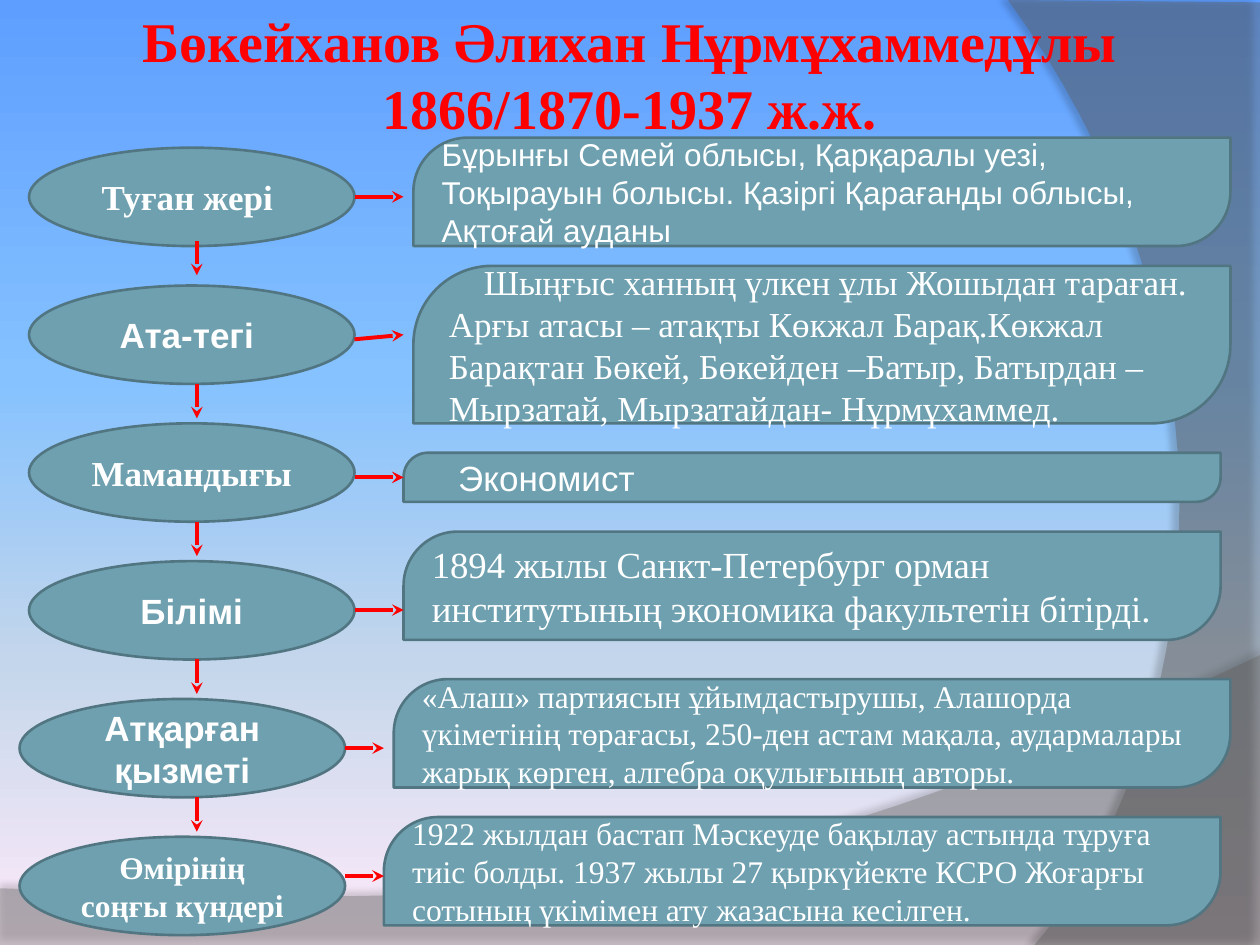
from dataclasses import dataclass

from lxml import etree
from pptx import Presentation
from pptx.dml.color import RGBColor
from pptx.enum.shapes import MSO_CONNECTOR, MSO_SHAPE
from pptx.enum.text import MSO_ANCHOR, PP_ALIGN
from pptx.oxml.ns import qn
from pptx.util import Pt

ELLIPSE, LEAF = MSO_SHAPE.OVAL, MSO_SHAPE.ROUND_2_DIAG_RECTANGLE
STRAIGHT = MSO_CONNECTOR.STRAIGHT
MIDDLE = MSO_ANCHOR.MIDDLE
LEFT, CENTER = PP_ALIGN.LEFT, PP_ALIGN.CENTER
SERIF, SANS = "Times New Roman", "Arial"
TEAL, EDGE, RED, WHITE = "6EA0B0", "517682", "FF0000", "FFFFFF"
SKY = [(0, "5E9EFF"), (40, "85C2FF"), (70, "C4D6EB"), (100, "FFEBFA")]
OVAL_TOP, OVAL_STEP, OVAL_W, OVAL_H = 84.4, 78.75, 186, 56.2
DOWN_X, DOWN_LEN = 112.5, 19.7


@dataclass
class Label:
    text: str
    size: float
    font: str = SERIF
    indent: float = 0


@dataclass
class Row:
    oval_left: float
    topic: Label
    box: tuple[float, float, float, float]
    detail: Label
    arrow_end: float
    arrow_y: tuple[float, float]
    down_shift: float = 0


@dataclass
class Wave:
    start: tuple[float, float]
    before: list[tuple[float, float]]
    curve: list[tuple[float, float]]
    color: str
    alpha: int
    shadow_alpha: int
    shadow_dist: float
    shadow_angle: int


WAVES = [
    Wave((0, 507.6), [(0, 540), (720, 540), (720, 374.4)],
         [(402.5, 524.9), (281.5, 517.7), (0, 507.6)], "7F7F7F", 45, 35, 3.5, 270),
    Wave((720, 1.4), [(720, 540), (591.1, 540)],
         [(673.2, 445.7), (733, 216), (576, 0)], "5E5E5E", 40, 45, 4, 180),
]

ROWS = [
    Row(16.6, Label("Туған жері ", 20), (236.2, 78.7, 466.9, 61.9),
        Label("Бұрынғы Семей облысы, Қарқаралы уезі, Тоқырауын болысы. "
              "Қазіргі Қарағанды облысы, Ақтоғай ауданы", 18, SANS),
        230.6, (112.5, 112.5), -3),
    Row(16.6, Label("Ата-тегі ", 20, SANS), (236.2, 151.9, 466.9, 90),
        Label("Шыңғыс ханның үлкен ұлы Жошыдан тараған. Арғы атасы – атақты "
              "Көкжал Барақ.Көкжал Барақтан Бөкей, Бөкейден –Батыр, Батырдан "
              "–Мырзатай, Мырзатайдан- Нұрмұхаммед.", 20, SERIF, 20),
        230.6, (193.9, 191.3)),
    Row(16.6, Label("Мамандығы", 20), (230.6, 258.7, 466.9, 28.1),
        Label("Экономист", 20, SANS, 20), 230.6, (272.8, 272.8)),
    Row(16.6, Label("Білімі", 20, SANS), (230.6, 303.8, 466.9, 61.9),
        Label("1894 жылы Санкт-Петербург орман институтының экономика "
              "факультетін бітірді.", 21), 230.6, (348.6, 348.6)),
    Row(11.2, Label("Атқарған қызметі", 20, SANS), (225, 388.1, 478.1, 61.9),
        Label("«Алаш» партиясын ұйымдастырушы, Алашорда үкіметінің төрағасы, "
              "250-ден астам мақала, аудармалары жарық көрген, алгебра "
              "оқулығының авторы.", 18), 219.4, (427.5, 427.5)),
    Row(11.2, Label("Өмірінің соңғы күндері", 18), (219.4, 466.9, 478.1, 61.9),
        Label("1922 жылдан бастап Мәскеуде бақылау астында тұруға тиіс болды. "
              "1937 жылы 27 қыркүйекте КСРО Жоғарғы сотының үкімімен ату "
              "жазасына кесілген.", 18), 219.4, (500.6, 500.6)),
]


def rgb(color: str) -> RGBColor:
    """Turn a hex string into a colour."""
    return RGBColor.from_string(color)


def add_color(parent, color: str, alpha: int = 100):
    """Append an sRGB colour with its opacity in percent."""
    clr = etree.SubElement(parent, qn("a:srgbClr"), val=color)
    if alpha < 100:
        etree.SubElement(clr, qn("a:alpha"), val=str(alpha * 1000))


def paint_sky(s):
    """Fill the background with the vertical sky gradient."""
    fill = s.background.fill
    fill.gradient()
    fill.gradient_angle = 270
    stops = s.element.find(".//" + qn("a:gsLst"))
    stops.clear()
    for position, color in SKY:
        add_color(etree.SubElement(stops, qn("a:gs"), pos=str(position * 1000)), color)


def bezier(p0, p1, p2, p3, steps: int = 40) -> list[tuple[float, float]]:
    """Sample a cubic curve after its first point."""
    points = []
    for i in range(1, steps + 1):
        t = i / steps
        u = 1 - t
        points.append(tuple(u**3 * a + 3 * u * u * t * b + 3 * u * t * t * c + t**3 * d
                            for a, b, c, d in zip(p0, p1, p2, p3)))
    return points


def add_wave(s, wave: Wave):
    """Draw a translucent background wave with a soft shadow."""
    points = wave.before + bezier(wave.before[-1], *wave.curve)
    builder = s.shapes.build_freeform(*(Pt(v) for v in wave.start), scale=1.0)
    builder.add_line_segments([(Pt(x), Pt(y)) for x, y in points], close=True)
    sp = builder.convert_to_shape()
    sp.line.fill.background()
    sp.fill.solid()
    sp.fill.fore_color.rgb = rgb(wave.color)
    clr = sp.element.spPr.find(qn("a:solidFill")).find(qn("a:srgbClr"))
    etree.SubElement(clr, qn("a:alpha"), val=str(wave.alpha * 1000))
    sp.shadow.inherit = False
    effects = sp.element.spPr.find(qn("a:effectLst"))
    shadow = etree.SubElement(effects, qn("a:outerShdw"), blurRad=str(Pt(4)),
                              dist=str(Pt(wave.shadow_dist)),
                              dir=str(wave.shadow_angle * 60000),
                              algn="ctr", rotWithShape="0")
    add_color(shadow, "000000", wave.shadow_alpha)


def write(sp, label: Label, color: str, align: PP_ALIGN, bold: bool):
    """Put one formatted paragraph into a shape."""
    tf = sp.text_frame
    tf.word_wrap = True
    tf.text = label.text
    p = tf.paragraphs[0]
    p.alignment = align
    if label.indent:
        p._p.get_or_add_pPr().set("indent", str(Pt(label.indent)))
    font = p.runs[0].font
    font.name, font.size, font.bold = label.font, Pt(label.size), bold
    font.color.rgb = rgb(color)


def add_panel(s, kind: MSO_SHAPE, box: tuple, label: Label, align: PP_ALIGN, bold: bool):
    """Draw a teal outlined shape with its text."""
    sp = s.shapes.add_shape(kind, *(Pt(v) for v in box))
    sp.shadow.inherit = False
    sp.fill.solid()
    sp.fill.fore_color.rgb = rgb(TEAL)
    sp.line.color.rgb = rgb(EDGE)
    sp.line.width = Pt(1.5)
    if kind == LEAF:
        sp.adjustments[0], sp.adjustments[1] = 0.5, 0
    write(sp, label, WHITE, align, bold)
    sp.text_frame.vertical_anchor = MIDDLE


def add_arrow(s, x1: float, y1: float, x2: float, y2: float):
    """Draw a red arrow between two points."""
    cxn = s.shapes.add_connector(STRAIGHT, Pt(x1), Pt(y1), Pt(x2), Pt(y2))
    cxn.line.color.rgb = rgb(RED)
    cxn.line.width = Pt(2.25)
    etree.SubElement(cxn.line._get_or_add_ln(), qn("a:tailEnd"), type="stealth")
    etree.SubElement(cxn._element.spPr, qn("a:effectLst"))


def main():
    """Build the slide and save it."""
    prs = Presentation()
    prs.slide_width, prs.slide_height = Pt(720), Pt(540)
    s = prs.slides.add_slide(prs.slide_layouts[6])
    paint_sky(s)
    for wave in WAVES:
        add_wave(s, wave)
    title = s.shapes.add_textbox(0, 0, Pt(720), Pt(85))
    write(title, Label("Бөкейханов Әлихан Нұрмұхаммедұлы 1866/1870-1937 ж.ж.", 32),
          RED, CENTER, True)
    for i, row in enumerate(ROWS):
        top = OVAL_TOP + i * OVAL_STEP
        add_panel(s, ELLIPSE, (row.oval_left, top, OVAL_W, OVAL_H), row.topic, CENTER, True)
        add_panel(s, LEAF, row.box, row.detail, LEFT, False)
        add_arrow(s, row.oval_left + OVAL_W, row.arrow_y[0], row.arrow_end, row.arrow_y[1])
        if row is not ROWS[-1]:
            start = top + OVAL_H + row.down_shift
            add_arrow(s, DOWN_X, start, DOWN_X, start + DOWN_LEN)
    prs.save("out.pptx")


if __name__ == "__main__":
    main()
